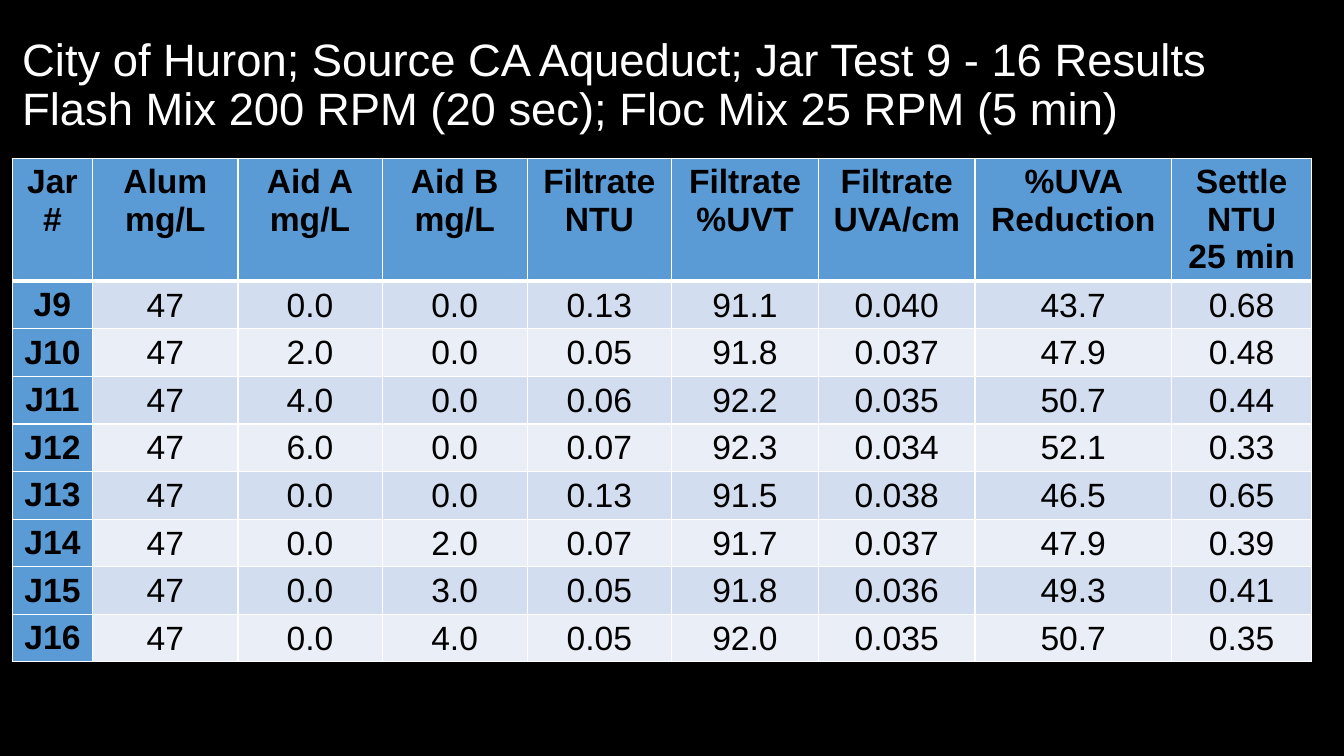
from lxml import etree
from pptx import Presentation
from pptx.dml.color import RGBColor
from pptx.enum.text import MSO_ANCHOR, PP_ALIGN
from pptx.oxml.ns import qn
from pptx.util import Inches, Pt

LEFT, CENTER = PP_ALIGN.LEFT, PP_ALIGN.CENTER
TOP, MIDDLE = MSO_ANCHOR.TOP, MSO_ANCHOR.MIDDLE

# Content
TITLE = ("City of Huron; Source CA Aqueduct; Jar Test 9 - 16 Results\n"
         "Flash Mix 200 RPM (20 sec); Floc Mix 25 RPM (5 min)")
HEADERS = ["Jar#", "Alum\nmg/L", "Aid A\nmg/L", "Aid B\nmg/L", "Filtrate\nNTU",
           "Filtrate\n%UVT", "Filtrate\nUVA/cm", "%UVA Reduction",
           "Settle\nNTU\n25 min"]
RESULTS = [
    ["J9", "47", "0.0", "0.0", "0.13", "91.1", "0.040", "43.7", "0.68"],
    ["J10", "47", "2.0", "0.0", "0.05", "91.8", "0.037", "47.9", "0.48"],
    ["J11", "47", "4.0", "0.0", "0.06", "92.2", "0.035", "50.7", "0.44"],
    ["J12", "47", "6.0", "0.0", "0.07", "92.3", "0.034", "52.1", "0.33"],
    ["J13", "47", "0.0", "0.0", "0.13", "91.5", "0.038", "46.5", "0.65"],
    ["J14", "47", "0.0", "2.0", "0.07", "91.7", "0.037", "47.9", "0.39"],
    ["J15", "47", "0.0", "3.0", "0.05", "91.8", "0.036", "49.3", "0.41"],
    ["J16", "47", "0.0", "4.0", "0.05", "92.0", "0.035", "50.7", "0.35"],
]

# Layout and colours
COLUMN_WIDTHS = [0.8, 1.44, 1.43, 1.44, 1.43, 1.46, 1.55, 1.95, 1.39]
HEADER_HEIGHT, ROW_HEIGHT = 1.22, 0.47
BLACK, WHITE, HEADING_BLUE = "000000", "FFFFFF", "5B9BD5"
BANDS = ["D2DEEF", "EAEFF7"]


def color(hex_string):
    return RGBColor.from_string(hex_string)


def format_text(text_frame, size, text_color, align, bold=False):
    for paragraph in text_frame.paragraphs:
        paragraph.alignment = align
        for run in paragraph.runs:
            run.font.name = "Arial"
            run.font.size = Pt(size)
            run.font.bold = bold
            run.font.color.rgb = color(text_color)


def set_borders(cell, widths):
    """Draw white borders; widths are points for left, right, top, bottom."""
    properties = cell._tc.get_or_add_tcPr()
    for index, (side, width) in enumerate(zip("LRTB", widths)):
        line = etree.Element(qn(f"a:ln{side}"), w=str(Pt(width)))
        fill = etree.SubElement(line, qn("a:solidFill"))
        etree.SubElement(fill, qn("a:srgbClr"), val=WHITE)
        properties.insert(index, line)


def add_title(slide):
    title = slide.shapes.title
    title.left, title.top = Inches(0.12), Inches(0.13)
    title.width, title.height = Inches(13.03), Inches(1.45)
    text_frame = title.text_frame
    text_frame.word_wrap = True
    text_frame.vertical_anchor = MIDDLE
    paragraph = text_frame.paragraphs[0]
    paragraph.text = TITLE
    paragraph.line_spacing = 0.9
    format_text(text_frame, 32.4, WHITE, LEFT)


def fill_cell(cell, text, row, column):
    is_heading = row == 0 or column == 0
    cell.text_frame.text = text
    format_text(cell.text_frame, 24, BLACK, CENTER, is_heading)
    cell.vertical_anchor = TOP if is_heading else MIDDLE
    if not is_heading:
        cell.margin_left = cell.margin_right = cell.margin_top = Inches(0.01)
        cell.margin_bottom = 0
    cell.fill.solid()
    cell.fill.fore_color.rgb = color(HEADING_BLUE if is_heading else BANDS[(row - 1) % 2])
    set_borders(cell, [1, 1, 3 if row == 1 else 1, 3 if row == 0 else 1])


def add_results_table(slide):
    rows = [HEADERS] + RESULTS
    heights = [HEADER_HEIGHT] + [ROW_HEIGHT] * len(RESULTS)
    table = slide.shapes.add_table(
        len(rows), len(HEADERS), Inches(0.12), Inches(1.57),
        Inches(sum(COLUMN_WIDTHS)), Inches(sum(heights))).table
    table.first_col = True
    for column, width in zip(table.columns, COLUMN_WIDTHS):
        column.width = Inches(width)
    for row, height in zip(table.rows, heights):
        row.height = Inches(height)
    for row_index, values in enumerate(rows):
        for column_index, text in enumerate(values):
            fill_cell(table.cell(row_index, column_index), text, row_index, column_index)


def main():
    presentation = Presentation()
    presentation.slide_width = Inches(13.33)
    presentation.slide_height = Inches(7.5)
    title_only = presentation.slide_layouts[5]
    slide = presentation.slides.add_slide(title_only)
    slide.background.fill.solid()
    slide.background.fill.fore_color.rgb = color(BLACK)
    add_title(slide)
    add_results_table(slide)
    presentation.save("out.pptx")


if __name__ == "__main__":
    main()
